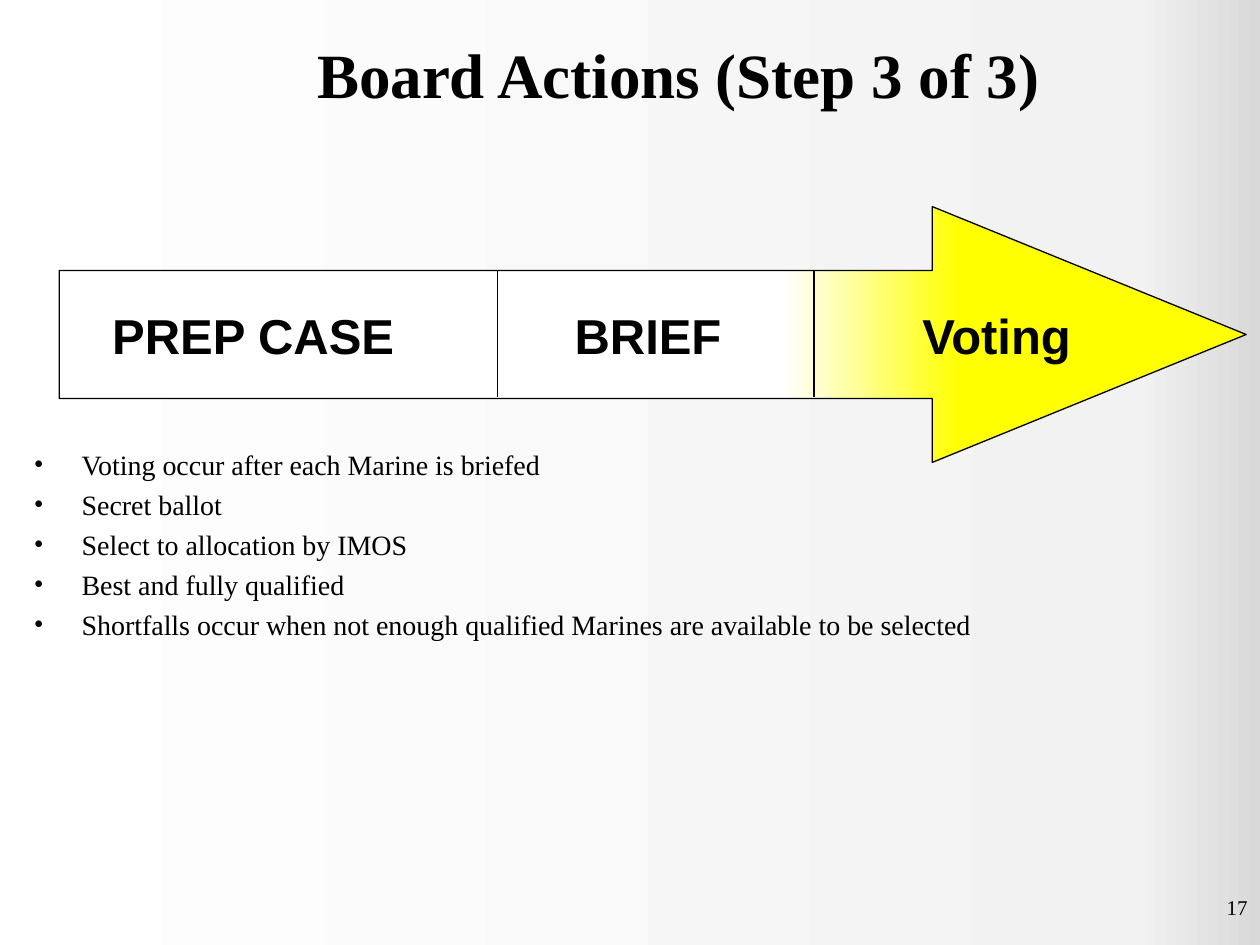
from lxml import etree
from pptx import Presentation
from pptx.dml.color import RGBColor
from pptx.enum.shapes import MSO_CONNECTOR, MSO_SHAPE
from pptx.enum.text import MSO_ANCHOR, PP_ALIGN
from pptx.oxml.ns import qn
from pptx.util import Inches, Pt

BLACK = RGBColor(0x00, 0x00, 0x00)
WHITE = RGBColor(0xFF, 0xFF, 0xFF)
YELLOW = RGBColor(0xFF, 0xFF, 0x00)
PALE_GRAY = RGBColor(0xF2, 0xF2, 0xF2)
GRAY = RGBColor(0xD9, 0xD9, 0xD9)
SERIF = "Times New Roman"
SANS = "Arial"
LEFT, CENTER, RIGHT = PP_ALIGN.LEFT, PP_ALIGN.CENTER, PP_ALIGN.RIGHT
TOP, MIDDLE, BOTTOM = MSO_ANCHOR.TOP, MSO_ANCHOR.MIDDLE, MSO_ANCHOR.BOTTOM
RIGHT_ARROW = MSO_SHAPE.RIGHT_ARROW
STRAIGHT = MSO_CONNECTOR.STRAIGHT

STEPS = ["PREP CASE", "BRIEF", "Voting"]
STEP_TABS = [3.67, 6.43]
DIVIDERS = [3.95, 6.46]
VOTING_RULES = [
    "Voting occur after each Marine is briefed",
    "Secret ballot",
    "Select to allocation by IMOS",
    "Best and fully qualified",
    "Shortfalls occur when not enough qualified Marines are available to be selected",
]


def set_gradient(fill, owner, stops):
    fill.gradient()
    fill.gradient_angle = 0
    stop_list = owner.find(".//" + qn("a:gsLst"))
    for old_stop in list(stop_list):
        stop_list.remove(old_stop)
    for percent, color in stops:
        stop = etree.SubElement(stop_list, qn("a:gs"), pos=str(percent * 1000))
        etree.SubElement(stop, qn("a:srgbClr"), val=str(color))


def style_font(font, size, name=SERIF, bold=False):
    font.name = name
    font.size = Pt(size)
    font.bold = bold
    font.color.rgb = BLACK


def add_text(slide, box, text, size, align=LEFT, anchor=TOP, bold=False):
    frame = slide.shapes.add_textbox(*map(Inches, box)).text_frame
    frame.word_wrap = True
    frame.vertical_anchor = anchor
    frame.text = text
    for paragraph in frame.paragraphs:
        paragraph.alignment = align
        for run in paragraph.runs:
            style_font(run.font, size, bold=bold)
    return frame


def add_bullets(slide, box, items, size):
    frame = add_text(slide, box, "\n".join(items), size)
    for index, paragraph in enumerate(frame.paragraphs):
        properties = paragraph._p.get_or_add_pPr()
        properties.set("marL", str(Inches(0.38)))
        properties.set("indent", str(-Inches(0.38)))
        etree.SubElement(properties, qn("a:buFont"), typeface=SERIF)
        etree.SubElement(properties, qn("a:buChar"), char="•")
        if index:
            paragraph.space_before = Pt(3.7)


def add_process_arrow(slide, box, steps, tabs):
    arrow = slide.shapes.add_shape(RIGHT_ARROW, *map(Inches, box))
    arrow.shadow.inherit = False
    arrow.adjustments[0] = 0.5
    arrow.adjustments[1] = 1.227
    set_gradient(arrow.fill, arrow.element, [(61, WHITE), (76, YELLOW)])
    arrow.line.color.rgb = BLACK
    arrow.line.width = Pt(0.75)

    frame = arrow.text_frame
    frame.margin_left = Inches(0.42)
    frame.vertical_anchor = MIDDLE
    frame.text = "\t".join(steps)
    labels = frame.paragraphs[0]
    labels.alignment = LEFT
    tab_list = etree.SubElement(labels._p.get_or_add_pPr(), qn("a:tabLst"))
    for position in tabs:
        etree.SubElement(tab_list, qn("a:tab"), pos=str(Inches(position)), algn="l")
    for run in labels.runs:
        style_font(run.font, 28, SANS, bold=True)


def add_divider(slide, x, top, bottom):
    divider = slide.shapes.add_connector(
        STRAIGHT, Inches(x), Inches(top), Inches(x), Inches(bottom)
    )
    divider.line.color.rgb = BLACK
    divider.line.width = Pt(0.75)
    etree.SubElement(divider.element.spPr, qn("a:effectLst"))


def main():
    presentation = Presentation()
    presentation.slide_width = Inches(10)
    presentation.slide_height = Inches(7.5)
    slide = presentation.slides.add_slide(presentation.slide_layouts[6])
    set_gradient(
        slide.background.fill,
        slide.element,
        [(0, WHITE), (90, PALE_GRAY), (100, GRAY)],
    )

    add_text(slide, (1.17, 0, 8.43, 1.17), "Board Actions (Step 3 of 3)", 36,
             CENTER, MIDDLE, bold=True)
    add_bullets(slide, (0.17, 3.5, 8.5, 3.67), VOTING_RULES, 16)
    add_text(slide, (7.67, 6.95, 2.33, 0.4), "17", 12, RIGHT, BOTTOM)
    add_process_arrow(slide, (0.47, 1.64, 9.42, 2.03), STEPS, STEP_TABS)
    for x in DIVIDERS:
        add_divider(slide, x, 2.15, 3.15)

    presentation.save("out.pptx")


if __name__ == "__main__":
    main()
